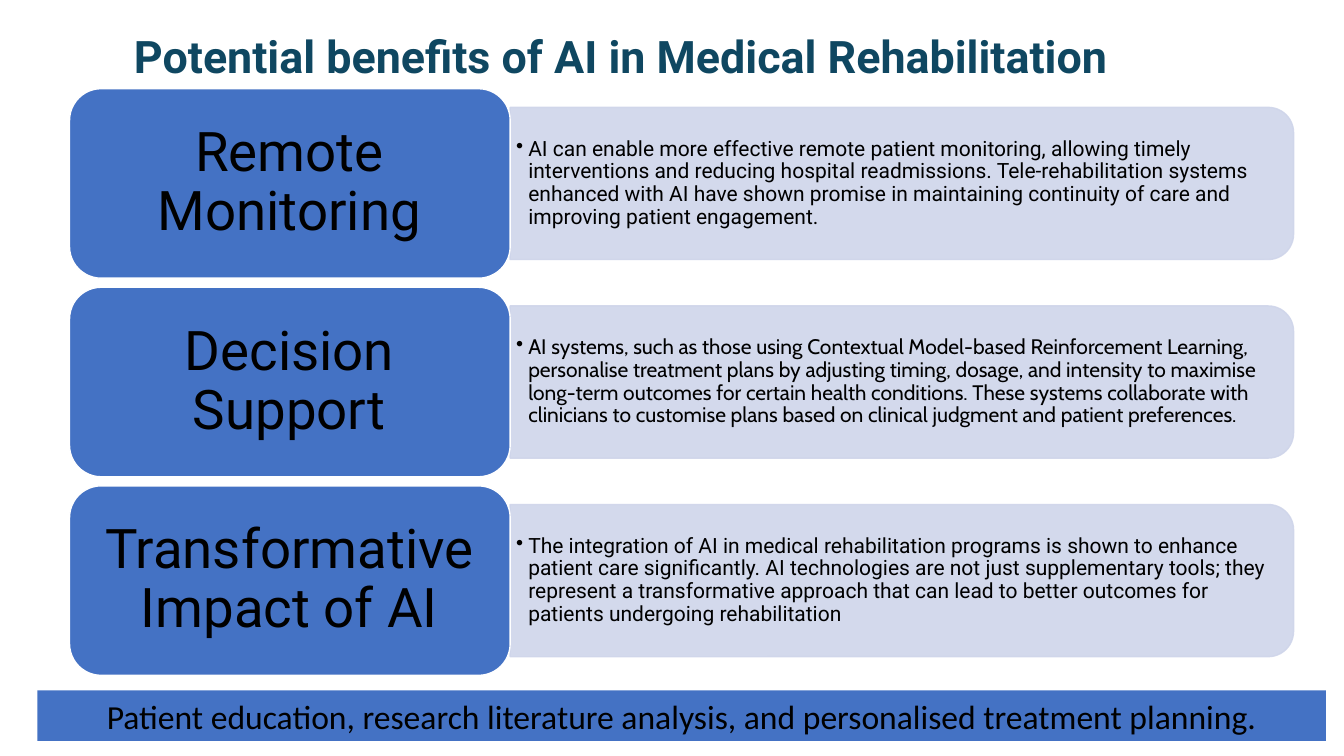
from lxml import etree
from pptx import Presentation
from pptx import util as u
from pptx.dml.color import RGBColor
from pptx.enum import shapes, text
from pptx.oxml.ns import qn

BLUE, PALE, WHITE, BLACK, TEAL = "4472C4", "CFD5EA", "FFFFFF", "000000", "0F4761"
KIND = shapes.MSO_SHAPE


def color(code):
    return RGBColor.from_string(code)


class Deck:
    font, ink = "Roboto", BLACK

    def __init__(self):
        self.prs = Presentation()
        self.prs.slide_width = u.Inches(13.33)
        self.prs.slide_height = u.Inches(7.5)
        self.slide = self.prs.slides.add_slide(self.prs.slide_layouts[6])

    def shape(self, kind, box, fill, line=None, alpha=None):
        item = self.slide.shapes.add_shape(kind, *map(u.Inches, box))
        item.shadow.inherit = False
        item.fill.solid()
        item.fill.fore_color.rgb = color(fill)
        if line:
            item.line.color.rgb = color(line)
            item.line.width = u.Pt(1)
        else:
            item.line.fill.background()
        if alpha:
            for node in item._element.spPr.iter(qn("a:srgbClr")):
                etree.SubElement(node, qn("a:alpha"), val=str(alpha * 1000))
        return item

    def words(self, item, copy, size, font=None, ink=None, bold=False,
              center=False, tight=False):
        frame = item.text_frame
        frame.text = copy
        frame.word_wrap = True
        para = frame.paragraphs[0]
        para.alignment = text.PP_ALIGN.CENTER if center else text.PP_ALIGN.LEFT
        if tight:
            para.line_spacing = 0.9
        style = para.runs[0].font
        style.size, style.bold = u.Pt(size), bold
        style.name = font or self.font
        style.color.rgb = color(ink or self.ink)
        return para

    def label(self, box, copy, size, pad=None, **look):
        item = self.slide.shapes.add_textbox(*map(u.Inches, box))
        frame = item.text_frame
        if pad:
            frame.vertical_anchor = text.MSO_ANCHOR.MIDDLE
            frame.margin_left = frame.margin_right = u.Inches(pad)
            frame.margin_top = frame.margin_bottom = u.Inches(pad / 2)
        return self.words(item, copy, size, **look)

    def bullet(self, box, copy, size, font):
        para = self.label(box, copy, size, pad=0.06, font=font, tight=True)
        para.level = 1
        props = para._p.get_or_add_pPr()
        hang = u.Inches(0.12)
        props.set("marL", str(hang))
        props.set("indent", str(-hang))
        etree.SubElement(props, qn("a:buChar"), char="•")


ROWS = [
    ("Remote Monitoring", "Roboto",
     "AI can enable more effective remote patient monitoring, allowing timely "
     "interventions and reducing hospital readmissions. Tele-rehabilitation "
     "systems enhanced with AI have shown promise in maintaining continuity "
     "of care and improving patient engagement."),
    ("Decision Support", "Cabin",
     "AI systems, such as those using Contextual Model-based Reinforcement "
     "Learning, personalise treatment plans by adjusting timing, dosage, and "
     "intensity to maximise long-term outcomes for certain health conditions. "
     "These systems collaborate with clinicians to customise plans based on "
     "clinical judgment and patient preferences."),
    ("Transformative Impact of AI", "Roboto",
     "The integration of AI in medical rehabilitation programs is shown to "
     "enhance patient care significantly. AI technologies are not just "
     "supplementary tools; they represent a transformative approach that can "
     "lead to better outcomes for patients undergoing rehabilitation"),
]
TOP, STEP, HIGH = 0.88, 1.97, 1.88


def main():
    deck = Deck()

    # Benefit rows: pale panel with bullet, blue card with heading
    for i, (head, font, body) in enumerate(ROWS):
        top = TOP + i * STEP
        mid = top + HIGH / 2
        panel = deck.shape(KIND.ROUND_2_SAME_RECTANGLE,
                           (8.19, mid - 7.77 / 2, 1.51, 7.77), PALE, PALE, 90)
        panel.rotation = 90
        deck.bullet((5.06, mid - 0.68, 7.69, 1.36), body, 15, font)
        deck.shape(KIND.ROUNDED_RECTANGLE, (0.69, top, 4.37, HIGH), BLUE, WHITE)
        deck.label((0.78, mid - 0.85, 4.18, 1.7), head, 39, pad=0.16,
                   center=True, tight=True)

    # Title
    deck.label((1.23, 0.24, 10.51, 0.64),
               "Potential benefits of AI in Medical Rehabilitation", 32,
               ink=TEAL, bold=True)

    # Bottom strip
    strip = deck.shape(KIND.RECTANGLE, (0.37, 6.85, 12.78, 0.5), BLUE)
    deck.words(strip, "Patient education, research literature analysis, and "
               "personalised treatment planning.", 24, font="Calibri", center=True)

    deck.prs.save("out.pptx")


if __name__ == "__main__":
    main()
